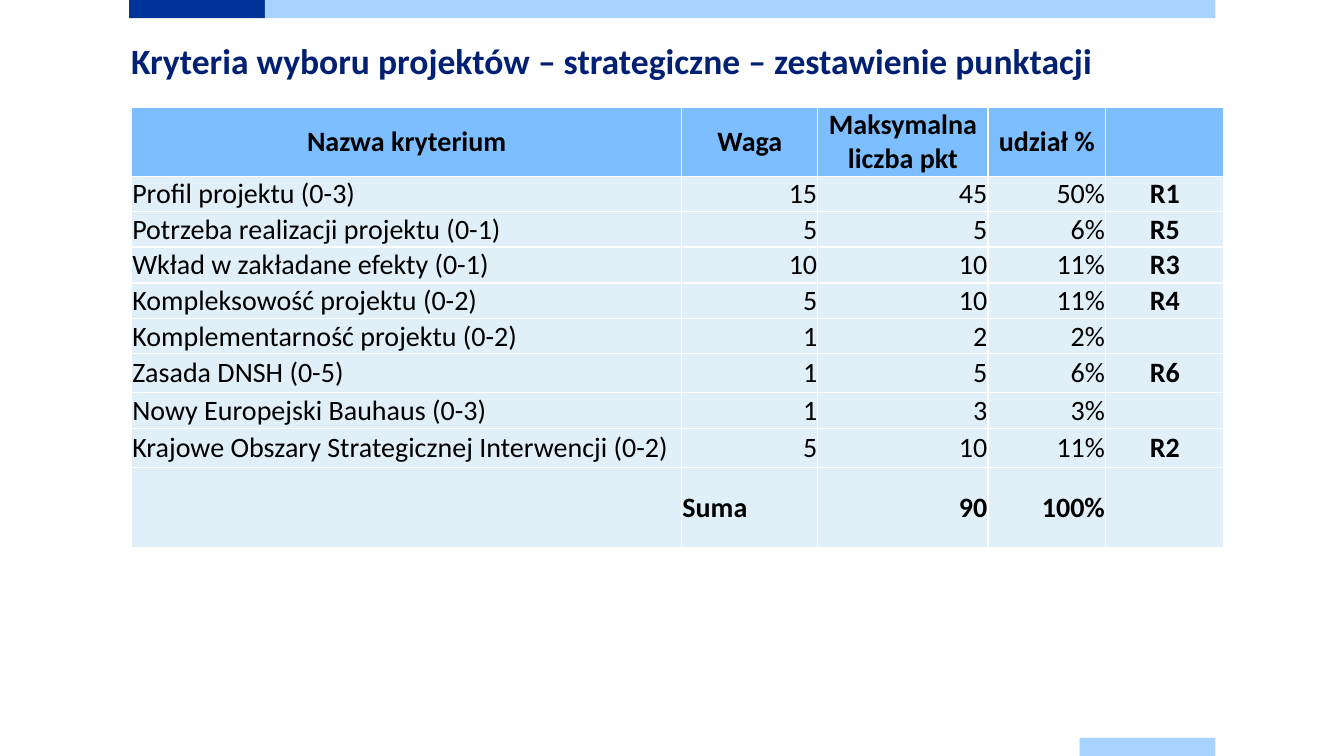
from lxml import etree
from pptx import Presentation
from pptx.dml.color import RGBColor
from pptx.enum import shapes, text
from pptx.oxml.ns import qn
from pptx.util import Pt

NAVY = RGBColor(0x00, 0x33, 0x99)
SKY = RGBColor(0xA6, 0xD3, 0xFF)
TITLE_BLUE = RGBColor(0x00, 0x20, 0x73)
HEAD_FILL = RGBColor(0x7C, 0xBE, 0xFF)
BODY_FILL = RGBColor(0xE1, 0xEF, 0xF9)
BLACK = RGBColor(0, 0, 0)
WHITE = RGBColor(0xFF, 0xFF, 0xFF)

SLIDE_W, SLIDE_H = 960, 540
LEFT, CENTER, RIGHT = (text.PP_ALIGN.LEFT, text.PP_ALIGN.CENTER,
                       text.PP_ALIGN.RIGHT)
COL_WIDTHS = [393, 97.2, 121.6, 84, 84.5]
COL_ALIGNS = [LEFT, RIGHT, RIGHT, RIGHT, CENTER]
ROW_HEIGHTS = [49.4, 25.2, 25.4, 25.6, 25.4, 25.2, 27.6, 25.6, 28, 57.2]
CRITERIA = [
    ["Nazwa kryterium", "Waga", "Maksymalna liczba pkt", "udział %", ""],
    ["Profil projektu (0-3)", "15", "45", "50%", "R1"],
    ["Potrzeba realizacji projektu (0-1)", "5", "5", "6%", "R5"],
    ["Wkład w zakładane efekty (0-1)", "10", "10", "11%", "R3"],
    ["Kompleksowość projektu (0-2)", "5", "10", "11%", "R4"],
    ["Komplementarność projektu (0-2)", "1", "2", "2%", ""],
    ["Zasada DNSH (0-5)", "1", "5", "6%", "R6"],
    ["Nowy Europejski Bauhaus (0-3)", "1", "3", "3%", ""],
    ["Krajowe Obszary Strategicznej Interwencji (0-2)", "5", "10", "11%", "R2"],
    ["", "Suma", "90", "100%", ""],
]


def set_all(obj, **values):
    for name, value in values.items():
        setattr(obj, name, value)


def set_font(font, size, color, bold):
    set_all(font, name="Calibri", size=Pt(size), bold=bold)
    font.color.rgb = color


def add_bars(s, x, w, h):
    """Top band with a dark start, and a short band at the bottom right."""
    short = w / 8
    for left, top, width, color in [(x, 0, short, NAVY),
                                    (x + short, 0, w - short, SKY),
                                    (x + w - short, SLIDE_H - h, short, SKY)]:
        sp = s.shapes.add_shape(shapes.MSO_SHAPE.RECTANGLE, Pt(left), Pt(top),
                                Pt(width), Pt(h))
        sp.shadow.inherit = False
        sp.fill.solid()
        sp.fill.fore_color.rgb = color
        sp.line.fill.background()


def add_title(s, x, y, w, h, words):
    sp = s.shapes.title
    set_all(sp, left=Pt(x), top=Pt(y), width=Pt(w), height=Pt(h))
    tf = sp.text_frame
    set_all(tf, margin_left=0, margin_right=0, margin_top=0, margin_bottom=0,
            word_wrap=True, auto_size=text.MSO_AUTO_SIZE.NONE,
            vertical_anchor=text.MSO_ANCHOR.TOP)
    p = tf.paragraphs[0]
    set_all(p, alignment=LEFT, line_spacing=Pt(32.7))
    r = p.add_run()
    r.text = words
    set_font(r.font, 25.4, TITLE_BLUE, True)


def add_borders(cell):
    tc_pr = cell._tc.get_or_add_tcPr()
    for i, side in enumerate(("lnL", "lnR", "lnT", "lnB")):
        ln = etree.Element(qn("a:" + side), w=str(Pt(1)))
        fill = etree.SubElement(ln, qn("a:solidFill"))
        etree.SubElement(fill, qn("a:srgbClr"), val=str(WHITE))
        tc_pr.insert(i, ln)


def add_cell(cell, words, align, bold, fill):
    set_all(cell, margin_left=Pt(0.5), margin_right=Pt(0.5),
            margin_top=Pt(0.5), margin_bottom=0,
            vertical_anchor=text.MSO_ANCHOR.MIDDLE)
    cell.fill.solid()
    cell.fill.fore_color.rgb = fill
    add_borders(cell)
    p = cell.text_frame.paragraphs[0]
    p.alignment = align
    if words:
        r = p.add_run()
        r.text = words
        set_font(r.font, 20, BLACK, bold)
    else:
        p.font.size = Pt(20)


def add_criteria_table(s, x, y):
    tbl = s.shapes.add_table(len(CRITERIA), len(COL_WIDTHS), Pt(x), Pt(y),
                             Pt(sum(COL_WIDTHS)), Pt(sum(ROW_HEIGHTS))).table
    for col, width in zip(tbl.columns, COL_WIDTHS):
        col.width = Pt(width)
    for row, height in zip(tbl.rows, ROW_HEIGHTS):
        row.height = Pt(height)
    last = len(CRITERIA) - 1
    for i, record in enumerate(CRITERIA):
        for j, words in enumerate(record):
            align = COL_ALIGNS[j]
            if i == 0:
                align = CENTER
            elif words == "Suma":
                align = LEFT
            add_cell(tbl.cell(i, j), words, align,
                     i in (0, last) or j == 4,
                     HEAD_FILL if i == 0 else BODY_FILL)


def main():
    prs = Presentation()
    set_all(prs, slide_width=Pt(SLIDE_W), slide_height=Pt(SLIDE_H))
    s = prs.slides.add_slide(prs.slide_layouts[5])
    add_bars(s, 92.2, 776, 13)
    add_criteria_table(s, 94, 76.4)
    add_title(s, 93.6, 25.9, 818, 41.8,
              "Kryteria wyboru projektów – strategiczne – zestawienie punktacji")
    prs.save("out.pptx")


if __name__ == "__main__":
    main()
